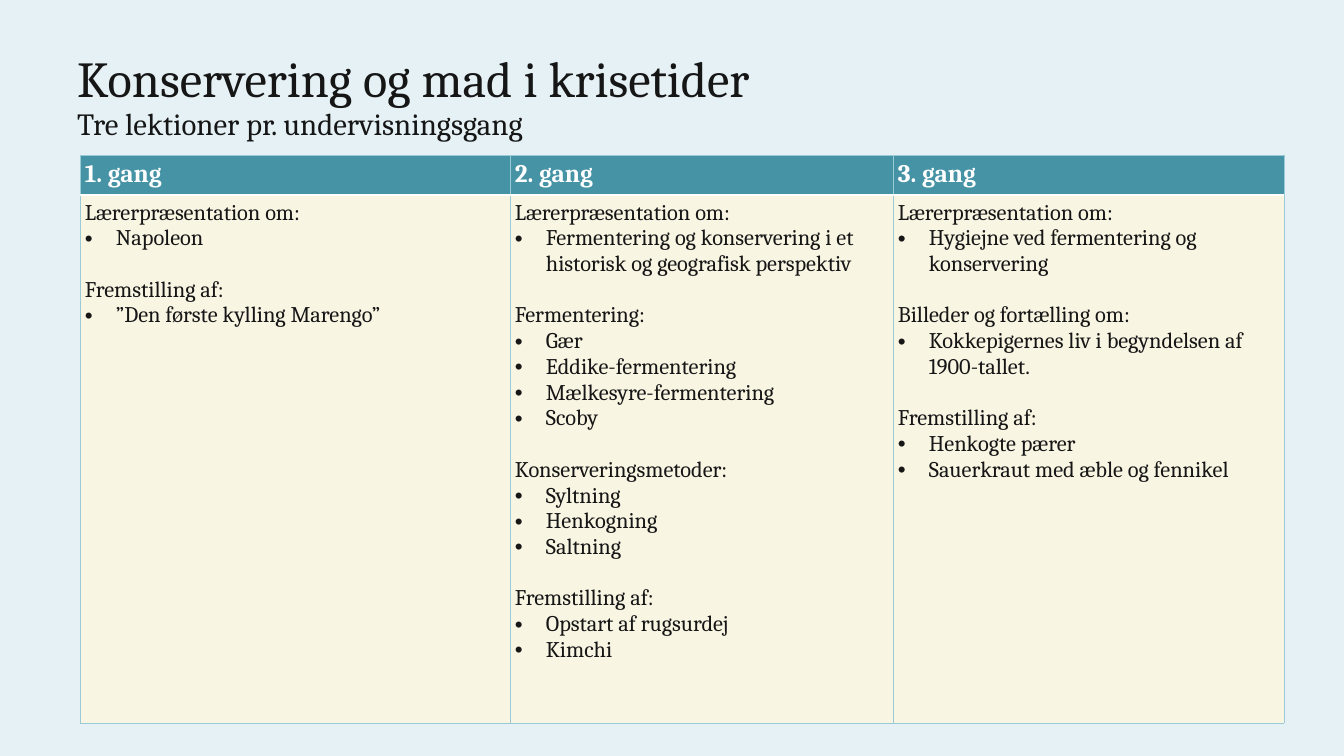
"""Build the lesson plan slide on food preservation in times of crisis."""
from lxml import etree
from pptx import Presentation
from pptx import util as u
from pptx.dml.color import RGBColor
from pptx.enum import text
from pptx.oxml.ns import qn

PX = 914400 / 100.8
FONT = "Cambria"
COLORS = {
    "background": "E5F1F4",
    "ink": "161616",
    "white": "FFFFFF",
    "header": "4693A6",
    "body": "F9F5E3",
    "border": "99CAD6",
}
TITLE_LINES = [
    ("Konservering og mad i krisetider", 36),
    ("Tre lektioner pr. undervisningsgang", 22),
]
COLUMN_WIDTHS = [430, 383, 391]
ROW_HEIGHTS = [40, 528]
LESSONS = [
    ("1. gang", [
        ("Lærerpræsentation om:", ["Napoleon"]),
        ("Fremstilling af:", ["”Den første kylling Marengo”"]),
    ]),
    ("2. gang", [
        ("Lærerpræsentation om:",
         ["Fermentering og konservering i et historisk og geografisk perspektiv"]),
        ("Fermentering:",
         ["Gær", "Eddike-fermentering", "Mælkesyre-fermentering", "Scoby"]),
        ("Konserveringsmetoder:", ["Syltning", "Henkogning", "Saltning"]),
        ("Fremstilling af:", ["Opstart af rugsurdej", "Kimchi"]),
    ]),
    ("3. gang", [
        ("Lærerpræsentation om:", ["Hygiejne ved fermentering og konservering"]),
        ("Billeder og fortælling om:",
         ["Kokkepigernes liv i begyndelsen af 1900-tallet."]),
        ("Fremstilling af:",
         ["Henkogte pærer", "Sauerkraut med æble og fennikel"]),
    ]),
]


def px(length):
    return u.Emu(round(length * PX))


def rgb(name):
    return RGBColor.from_string(COLORS[name])


def add_line(frame, words, size, color="ink", bold=False, bullet=False):
    first = frame.paragraphs[0]
    line = frame.add_paragraph() if first.runs else first
    line.add_run().text = words
    line.alignment = text.PP_ALIGN.LEFT
    if bullet:
        properties = line._p.get_or_add_pPr()
        properties.set("marL", str(px(31)))
        properties.set("indent", str(-px(31)))
        etree.SubElement(properties, qn("a:buFont"), typeface="Arial")
        etree.SubElement(properties, qn("a:buChar"), char="•")
    line.font.name = FONT
    line.font.size = u.Pt(size)
    line.font.bold = bold
    line.font.color.rgb = rgb(color)
    return line


def add_border(cell, side, color, points):
    border = etree.SubElement(cell._tc.get_or_add_tcPr(), qn(f"a:ln{side}"),
                              w=str(u.Pt(points)))
    fill = etree.SubElement(border, qn("a:solidFill"))
    etree.SubElement(fill, qn("a:srgbClr"), val=COLORS[color])


def style_cell(cell, fill, divider):
    cell.margin_left = cell.margin_right = px(5)
    cell.margin_top = cell.margin_bottom = px(5)
    for side in "LRTB":
        if side == divider:
            add_border(cell, side, "white", 1)
        else:
            add_border(cell, side, "border", 0.5)
    cell.fill.solid()
    cell.fill.fore_color.rgb = rgb(fill)


def fill_title(title):
    title.left, title.top, title.width, title.height = map(px, (67, 26, 1022, 144))
    frame = title.text_frame
    frame.word_wrap = True
    frame.auto_size = text.MSO_AUTO_SIZE.NONE
    frame.vertical_anchor = text.MSO_ANCHOR.MIDDLE
    for words, size in TITLE_LINES:
        line = add_line(frame, words, size)
        line.line_spacing = 0.9
        line.space_before = u.Pt(0)


def fill_topics(frame, topics):
    for number, (heading, items) in enumerate(topics):
        line = add_line(frame, heading, 16)
        if number:
            line.space_before = u.Pt(18.4)
        for item in items:
            add_line(frame, item, 16, bullet=True)


def add_lessons(slide):
    table = slide.shapes.add_table(
        len(ROW_HEIGHTS), len(LESSONS), px(80), px(155),
        px(sum(COLUMN_WIDTHS)), px(sum(ROW_HEIGHTS))).table
    for row, height in zip(table.rows, ROW_HEIGHTS):
        row.height = px(height)
    for index, (lesson, topics) in enumerate(LESSONS):
        table.columns[index].width = px(COLUMN_WIDTHS[index])
        header, body = table.cell(0, index), table.cell(1, index)
        style_cell(header, "header", "B")
        style_cell(body, "body", "T")
        add_line(header.text_frame, lesson, 18, "white", bold=True)
        fill_topics(body.text_frame, topics)


def main():
    deck = Presentation()
    deck.slide_width, deck.slide_height = px(1344), px(756)
    slide = deck.slides.add_slide(deck.slide_layouts[5])
    slide.background.fill.solid()
    slide.background.fill.fore_color.rgb = rgb("background")
    fill_title(slide.shapes.title)
    add_lessons(slide)
    deck.save("out.pptx")


if __name__ == "__main__":
    main()
